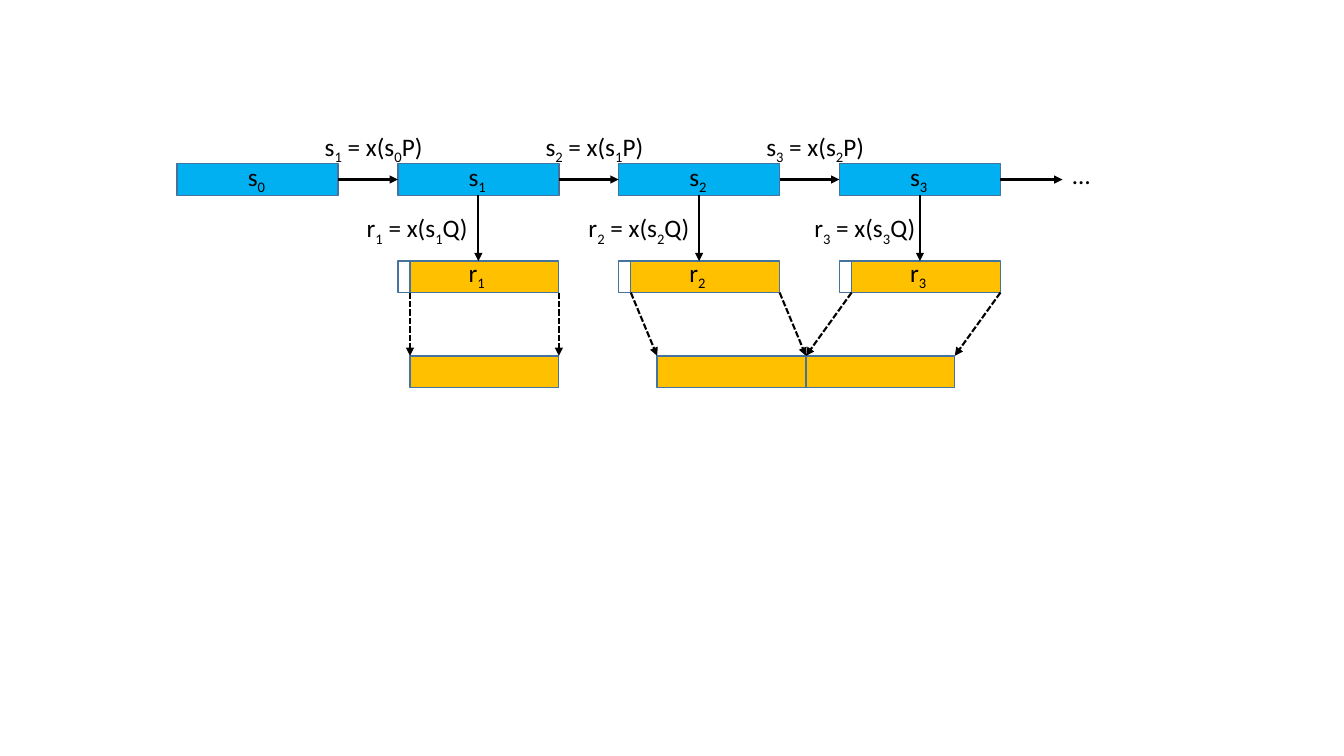
"""Build the slide that shows how states s and outputs r form a stream."""
from lxml.etree import SubElement
from pptx import Presentation
from pptx.dml.color import RGBColor
from pptx.enum.dml import MSO_LINE
from pptx.enum.shapes import MSO_CONNECTOR, MSO_SHAPE
from pptx.enum.text import MSO_AUTO_SIZE
from pptx.oxml.ns import qn
from pptx.util import Pt

STATE_LEFT, STATE_PITCH, STATE_WIDTH = 126.5, 157.7, 115
BOX_HEIGHT, DROPPED_WIDTH = 22.5, 8.7
OUTPUT_WIDTH = STATE_WIDTH - DROPPED_WIDTH
STATE_TOP, OUTPUT_TOP, STREAM_TOP = 117, 186.5, 254.2
STATE_MIDDLE = STATE_TOP + BOX_HEIGHT / 2
LABEL_OFFSET, UPDATE_OFFSET = 43.4, -59.3
ELLIPSIS_LEFT = 759
OUTPUT_FORMULA_LEFTS = [254.9, 413.3, 574.6]
STREAM_LEFTS = [STATE_LEFT + STATE_PITCH + DROPPED_WIDTH, 469.4, 469.4 + OUTPUT_WIDTH]


def rgb(value):
    return RGBColor.from_string(value)


def add_runs(paragraph, text, font="Calibri", size=18, color="000000"):
    def add_run(part, subscript=False):
        run = paragraph.add_run()
        run.text = part
        run.font.name, run.font.size = font, Pt(size)
        run.font.color.rgb = rgb(color)
        if subscript:
            run._r.get_or_add_rPr().set("baseline", "-25000")

    first, *pieces = text.split("_")
    add_run(first)
    for piece in pieces:
        add_run(piece[0], subscript=True)
        if piece[1:]:
            add_run(piece[1:])


class Diagram:
    state_fill, output_fill, dropped_fill = "00B0F0", "FFC000", "FFFFFF"
    outline, ink = "43739E", "000000"

    def __init__(self, slide):
        self.slide = slide

    def box(self, left, top, width, fill):
        shape = self.slide.shapes.add_shape(
            MSO_SHAPE.RECTANGLE, Pt(left), Pt(top), Pt(width), Pt(BOX_HEIGHT))
        shape.shadow.inherit = False
        shape.fill.solid()
        shape.fill.fore_color.rgb = rgb(fill)
        shape.line.color.rgb = rgb(self.outline)
        shape.line.width = Pt(1)
        return shape

    def label(self, left, top, width, text):
        frame = self.slide.shapes.add_textbox(Pt(left), Pt(top), Pt(width), Pt(29)).text_frame
        frame.word_wrap = False
        frame.auto_size = MSO_AUTO_SIZE.SHAPE_TO_FIT_TEXT
        add_runs(frame.paragraphs[0], text, color=self.ink)

    def arrow(self, begin, end, dashed=False):
        connector = self.slide.shapes.add_connector(
            MSO_CONNECTOR.STRAIGHT, *(Pt(value) for value in (*begin, *end)))
        connector.line.color.rgb = rgb(self.ink)
        connector.line.width = Pt(1.5)
        if dashed:
            connector.line.dash_style = MSO_LINE.SQUARE_DOT
        SubElement(connector.line._get_or_add_ln(), qn("a:tailEnd"), type="triangle")
        SubElement(connector._element.spPr, qn("a:effectLst"))
        return connector


def main():
    presentation = Presentation()
    presentation.slide_width, presentation.slide_height = Pt(960), Pt(540)
    diagram = Diagram(presentation.slides.add_slide(presentation.slide_layouts[6]))

    state_lefts = [STATE_LEFT + STATE_PITCH * i for i in range(4)]
    states = []
    for i, left in enumerate(state_lefts):
        states.append(diagram.box(left, STATE_TOP, STATE_WIDTH, diagram.state_fill))
        diagram.label(left + LABEL_OFFSET, 111.6, 28.1, f"s_{i}")

    for i, state in enumerate(states):
        next_left = (state_lefts + [ELLIPSIS_LEFT])[i + 1]
        arrow = diagram.arrow((state_lefts[i] + STATE_WIDTH, STATE_MIDDLE),
                              (next_left, STATE_MIDDLE))
        arrow.begin_connect(state, 3)
        if i + 1 < len(states):
            arrow.end_connect(states[i + 1], 1)
            diagram.label(next_left + UPDATE_OFFSET, 90, 86.4, f"s_{i + 1} = x(s_{i}P)")
    diagram.label(ELLIPSIS_LEFT, 110.2, 27.4, "…")

    columns = zip(state_lefts[1:], states[1:], OUTPUT_FORMULA_LEFTS, STREAM_LEFTS)
    for i, (left, state, formula_left, stream_left) in enumerate(columns, 1):
        output_left = left + DROPPED_WIDTH
        diagram.box(output_left, OUTPUT_TOP, OUTPUT_WIDTH, diagram.output_fill)
        diagram.box(left, OUTPUT_TOP, DROPPED_WIDTH, diagram.dropped_fill)
        diagram.label(left + LABEL_OFFSET, 180, 27.4, f"r_{i}")
        diagram.label(formula_left, 148.3, 89.3, f"r_{i} = x(s_{i}Q)")
        center = left + STATE_WIDTH / 2
        arrow = diagram.arrow((center, STATE_TOP + BOX_HEIGHT), (center, OUTPUT_TOP))
        arrow.begin_connect(state, 2)

        diagram.box(stream_left, STREAM_TOP, OUTPUT_WIDTH, diagram.output_fill)
        for edge in (0, OUTPUT_WIDTH):
            diagram.arrow((output_left + edge, OUTPUT_TOP + BOX_HEIGHT),
                          (stream_left + edge, STREAM_TOP), dashed=True)

    presentation.save("out.pptx")


if __name__ == "__main__":
    main()
